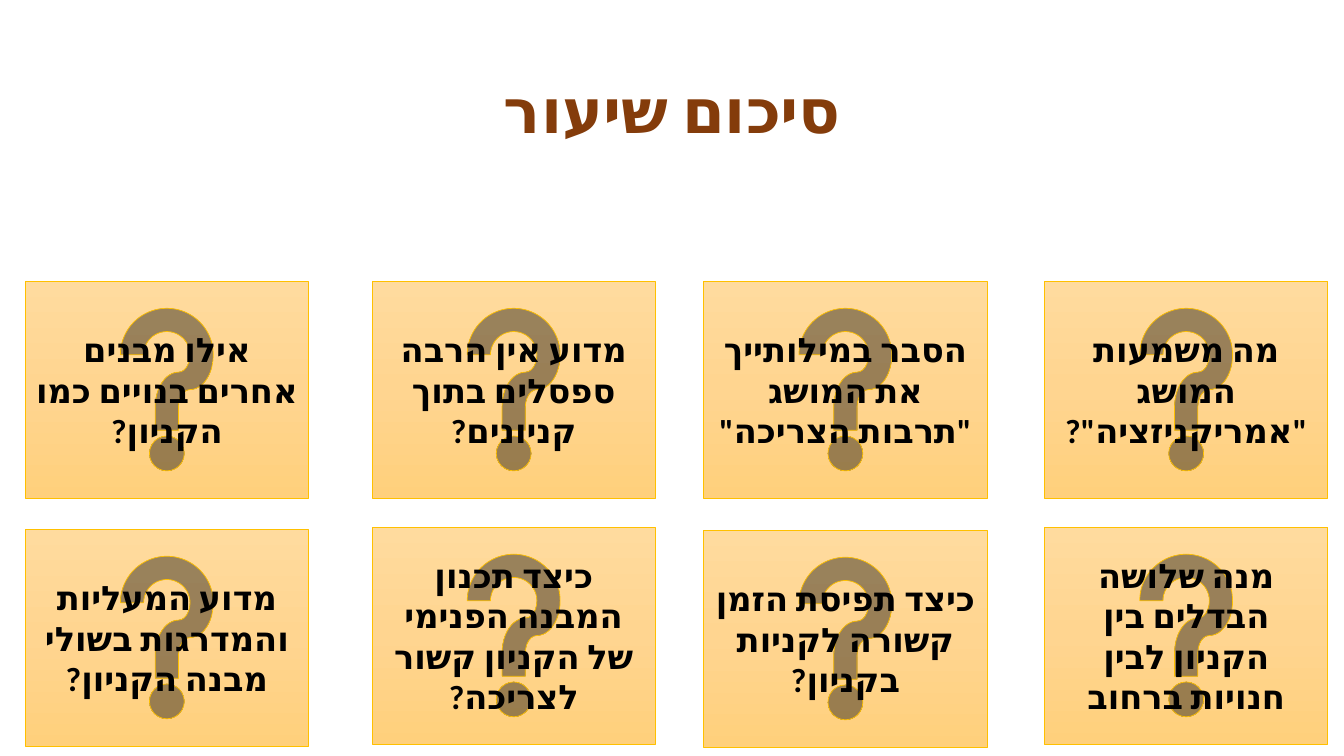
from copy import deepcopy
from dataclasses import dataclass

from pptx import Presentation
from pptx.dml.color import RGBColor
from pptx.enum.lang import MSO_LANGUAGE_ID as Language
from pptx.enum.shapes import MSO_SHAPE as Preset
from pptx.enum.text import MSO_ANCHOR as Anchor, PP_ALIGN as Align
from pptx.oxml.ns import qn
from pptx.util import Pt

EMU_PER_PX = 9144  # 100 px to the inch


@dataclass(frozen=True)
class Theme:
    font: str = "Calibri"
    title_color: str = "843C0B"
    text_color: str = "000000"
    line_color: str = "FFC000"
    gradient: tuple = ("FFDB9E", "FFD590", "FFD07C")
    title_size: int = 44
    card_size: int = 24
    line_width: float = 0.5


THEME = Theme()

TITLE = "סיכום שיעור"
TITLE_BOX = (92, 40, 1150, 145)
CARD_WIDTH, CARD_HEIGHT = 281, 215
UPPER_TOP = 279
# Each column: left, top of its lower card, upper question, lower question
COLUMNS = [
    (25, 525, "אילו מבנים אחרים בנויים כמו הקניון?",
     "מדוע המעליות והמדרגות בשולי מבנה הקניון?"),
    (369, 523, "מדוע אין הרבה ספסלים בתוך קניונים?",
     "כיצד תכנון המבנה הפנימי של הקניון קשור לצריכה?"),
    (698, 526, 'הסבר במילותייך את המושג "תרבות הצריכה"',
     "כיצד תפיסת הזמן קשורה לקניות בקניון?"),
    (1036, 523, 'מה משמעות המושג "אמריקניזציה"?',
     "מנה שלושה הבדלים בין הקניון לבין חנויות ברחוב"),
]


def px(length):
    return length * EMU_PER_PX


def color(value):
    return RGBColor.from_string(value)


def write_hebrew(shape, text, size, text_color):
    """Centre one bold right-to-left paragraph in the shape."""
    frame = shape.text_frame
    frame.word_wrap = True
    frame.vertical_anchor = Anchor.MIDDLE
    paragraph = frame.paragraphs[0]
    paragraph.alignment = Align.CENTER
    paragraph._p.get_or_add_pPr().set("rtl", "1")
    run = paragraph.add_run()
    run.text = text
    font = run.font
    font.name, font.size, font.bold = THEME.font, Pt(size), True
    font.color.rgb = color(text_color)
    font.language_id = Language.HEBREW
    properties = run._r.get_or_add_rPr()
    complex_font = properties.makeelement(qn("a:cs"), {"typeface": THEME.font})
    properties.find(qn("a:latin")).addnext(complex_font)
    return paragraph


def fill_gradient(shape):
    fill = shape.fill
    fill.gradient()
    fill.gradient_angle = 270
    first_stop = shape._element.spPr.find(".//" + qn("a:gs"))
    first_stop.addnext(deepcopy(first_stop))
    last = len(THEME.gradient) - 1
    for index, (stop, value) in enumerate(zip(fill.gradient_stops, THEME.gradient)):
        stop.position = index / last
        stop.color.rgb = color(value)


def add_title(slide, box):
    title = slide.shapes.title
    title.left, title.top, title.width, title.height = map(px, box)
    paragraph = write_hebrew(title, TITLE, THEME.title_size, THEME.title_color)
    paragraph.line_spacing = 0.9


def add_card(slide, box, question):
    card = slide.shapes.add_shape(Preset.ACTION_BUTTON_HELP, *map(px, box))
    card.shadow.inherit = False
    fill_gradient(card)
    card.line.color.rgb = color(THEME.line_color)
    card.line.width = Pt(THEME.line_width)
    write_hebrew(card, question, THEME.card_size, THEME.text_color)


def add_column(slide, left, lower_top, upper_question, lower_question):
    for top, question in ((UPPER_TOP, upper_question), (lower_top, lower_question)):
        add_card(slide, (left, top, CARD_WIDTH, CARD_HEIGHT), question)


def main():
    presentation = Presentation()
    presentation.slide_width, presentation.slide_height = px(1333), px(750)
    slide = presentation.slides.add_slide(presentation.slide_layouts[5])
    add_title(slide, TITLE_BOX)
    for column in COLUMNS:
        add_column(slide, *column)
    presentation.save("out.pptx")


if __name__ == "__main__":
    main()
